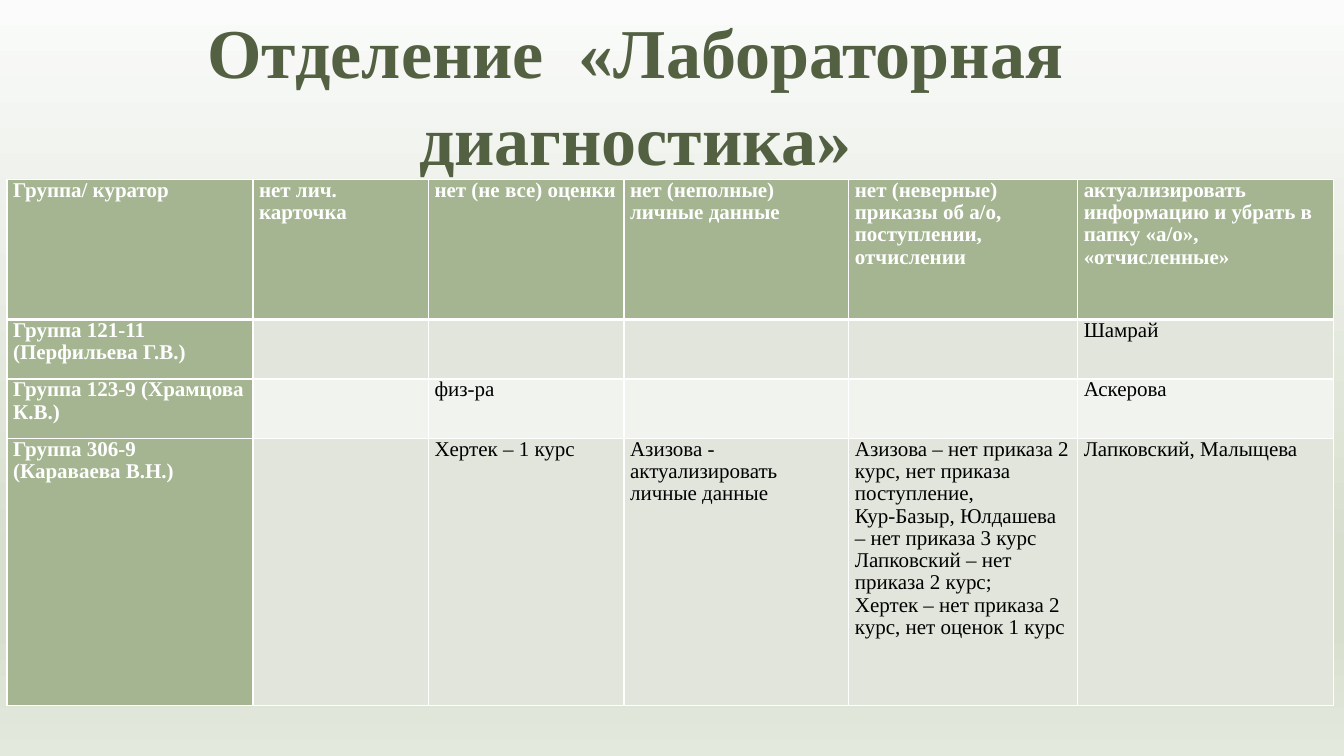
"""Builds the slide with the records table of the laboratory diagnostics department."""
from copy import deepcopy

from pptx import Presentation
from pptx.dml.color import RGBColor
from pptx.enum.text import PP_ALIGN as AL
from pptx.oxml import parse_xml
from pptx.oxml.ns import nsdecls, qn
from pptx.util import Inches as I, Pt

GREEN, WHITE, BLACK = "A5B592", "FFFFFF", "000000"
BANDS = ["E1E5DC", "F0F3EE"]
STOPS = [(0, "FAFBFA"), (0.74, "D7DECE"), (0.83, "D7DECE"), (1, "E4E9DE")]
COLS = [2.44, 1.74, 1.94, 2.23, 2.27, 2.54]
HEIGHTS = [1.39, 0.59, 0.59, 2.65]
ROWS = [
    ["Группа/ куратор", "нет лич. карточка", "нет (не все) оценки",
     "нет (неполные) личные данные",
     "нет (неверные) приказы об а/о, поступлении, отчислении",
     "актуализировать информацию и убрать в папку «а/о», «отчисленные»"],
    ["Группа 121-11 (Перфильева Г.В.)", "", "", "", "", "Шамрай"],
    ["Группа 123-9 (Храмцова К.В.)", "", "физ-ра", "", "", "Аскерова"],
    ["Группа 306-9 (Караваева В.Н.)", "", "Хертек – 1 курс",
     "Азизова - актуализировать личные данные",
     "Азизова – нет приказа 2 курс, нет приказа поступление,\n"
     "Кур-Базыр, Юлдашева – нет приказа 3 курс\n"
     "Лапковский – нет приказа 2 курс;\n"
     "Хертек – нет приказа 2 курс, нет оценок 1 курс",
     "Лапковский, Малыщева"],
]


def rgb(color):
    return RGBColor.from_string(color)


def write(tf, text, size=15, color=BLACK, bold=False, align=AL.LEFT, spacing=0.96):
    tf.word_wrap = True
    for i, line in enumerate(text.split("\n")):
        p = tf.add_paragraph() if i else tf.paragraphs[0]
        p.alignment, p.line_spacing = align, spacing
        r = p.add_run()
        r.text = line
        r.font.name, r.font.size, r.font.bold = "Times New Roman", Pt(size), bold
        r.font.color.rgb = rgb(color)


prs = Presentation()
prs.slide_width, prs.slide_height = I(13.33), I(7.5)
s = prs.slides.add_slide(prs.slide_layouts[6])

fill = s.background.fill
fill.gradient()
fill.gradient_angle = 270
stops = s.element.find(".//" + qn("a:gsLst"))
for _ in STOPS[2:]:
    stops.append(deepcopy(stops[0]))
for stop, (pos, color) in zip(fill.gradient_stops, STOPS):
    stop.position, stop.color.rgb = pos, rgb(color)

title = s.shapes.add_textbox(I(0.46), 0, I(11.69), I(1.78))
write(title.text_frame, "Отделение  «Лабораторная диагностика»", size=50,
      color="536142", bold=True, align=AL.CENTER, spacing=1.04)

table = s.shapes.add_table(len(ROWS), len(COLS), I(0.07), I(1.78),
                           I(sum(COLS)), I(sum(HEIGHTS))).table
for col, width in zip(table.columns, COLS):
    col.width = I(width)
for y, (row, height) in enumerate(zip(ROWS, HEIGHTS)):
    table.rows[y].height = I(height)
    for x, text in enumerate(row):
        cell = table.cell(y, x)
        head = y == 0 or x == 0
        cell.margin_left = cell.margin_right = I(0.06)
        cell.margin_top = cell.margin_bottom = 0
        if text:
            write(cell.text_frame, text, color=WHITE if head else BLACK, bold=head)
        widths = {"lnL": 1, "lnR": 1, "lnT": 3 if y == 1 else 1, "lnB": 1 if y else 3}
        for side, width in widths.items():
            cell.fill.background()
            cell._tc.get_or_add_tcPr().insert(len(cell._tc.tcPr) - 1, parse_xml(
                f'<a:{side} {nsdecls("a")} w="{Pt(width)}"><a:solidFill>'
                f'<a:srgbClr val="{WHITE}"/></a:solidFill></a:{side}>'))
        cell.fill.solid()
        cell.fill.fore_color.rgb = rgb(GREEN if head else BANDS[(y - 1) % 2])

prs.save("out.pptx")
